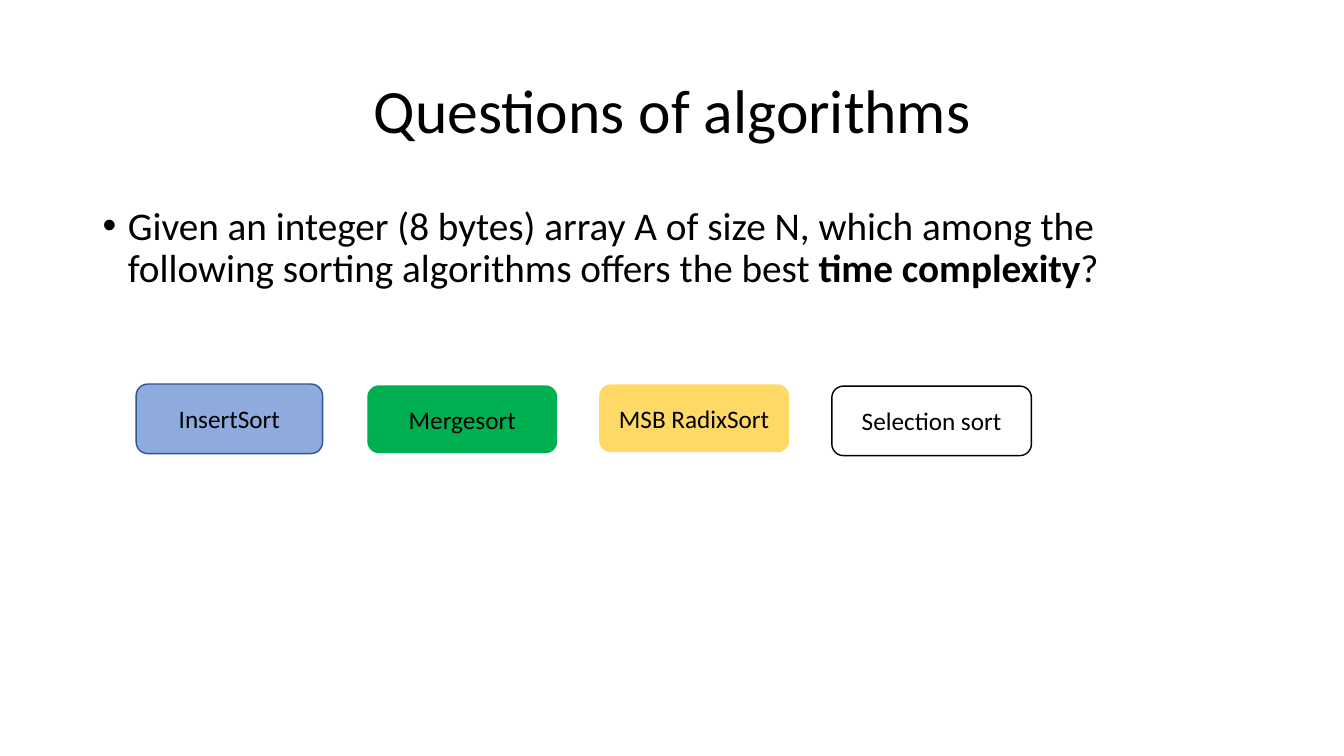
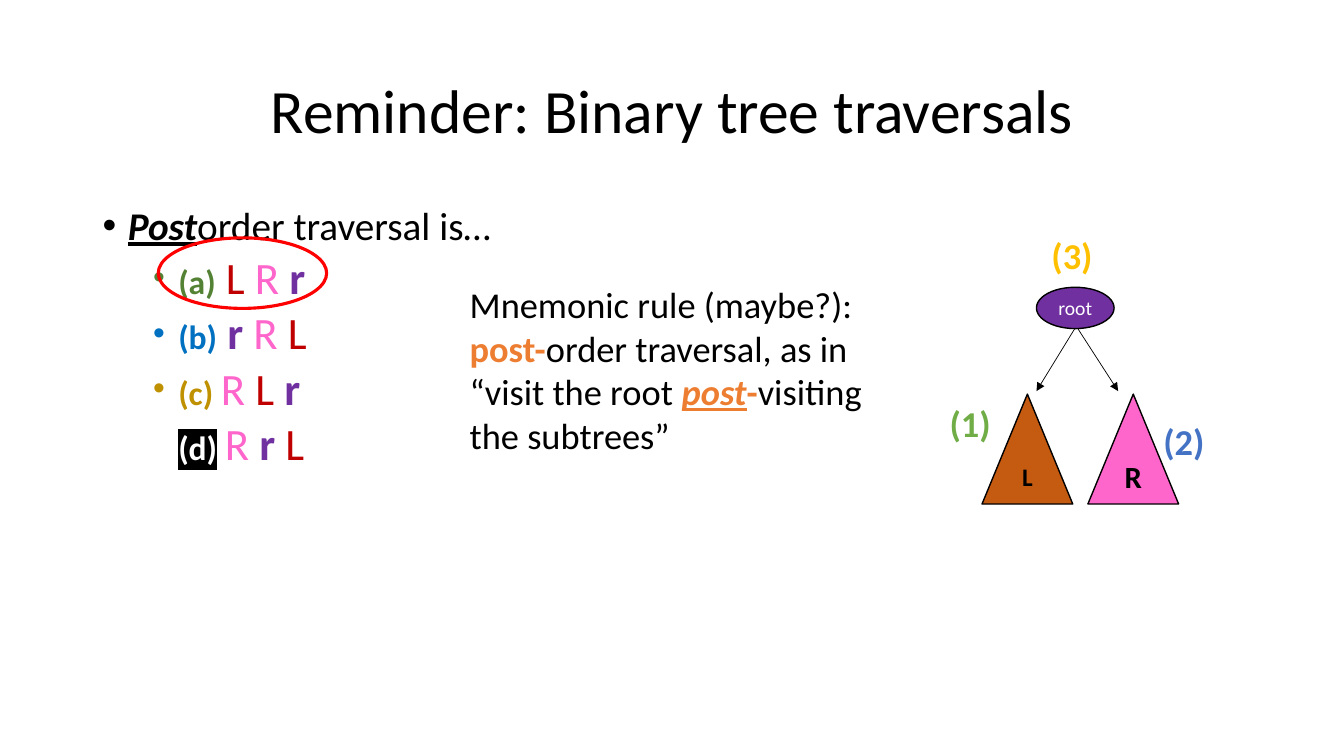
from lxml.etree import SubElement
from pptx import Presentation
from pptx.dml.color import RGBColor
from pptx.enum.shapes import MSO_CONNECTOR, MSO_SHAPE
from pptx.enum.text import MSO_ANCHOR, MSO_AUTO_SIZE, PP_ALIGN
from pptx.oxml.ns import qn
from pptx.util import Inches, Pt

FONT = "Calibri"
BLACK = RGBColor(0x00, 0x00, 0x00)
WHITE = RGBColor(0xFF, 0xFF, 0xFF)
RED = RGBColor(0xFF, 0x00, 0x00)
DARK_RED = RGBColor(0xC0, 0x00, 0x00)
PINK = RGBColor(0xFF, 0x66, 0xCC)
PURPLE = RGBColor(0x70, 0x30, 0xA0)
DARK_GREEN = RGBColor(0x54, 0x82, 0x35)
GREEN = RGBColor(0x00, 0xB0, 0x50)
LIGHT_GREEN = RGBColor(0x70, 0xAD, 0x47)
BRIGHT_BLUE = RGBColor(0x00, 0x70, 0xC0)
BLUE = RGBColor(0x44, 0x72, 0xC4)
PALE_BLUE = RGBColor(0x8F, 0xAA, 0xDC)
DARK_BLUE = RGBColor(0x2F, 0x55, 0x97)
OCHRE = RGBColor(0xBF, 0x90, 0x00)
GOLD = RGBColor(0xFF, 0xC0, 0x00)
YELLOW = RGBColor(0xFF, 0xD9, 0x66)
ORANGE = RGBColor(0xED, 0x7D, 0x31)
BROWN = RGBColor(0xC5, 0x5A, 0x11)


def add_text(paragraph, text, size=18, color=BLACK, bold=False, italic=False,
             underline=False, highlight=None):
    run = paragraph.add_run()
    run.text = text
    font = run.font
    font.size = Pt(size)
    font.bold = bold
    font.italic = italic
    font.underline = underline
    font.color.rgb = color
    if highlight is not None:
        mark = SubElement(font._element, qn("a:highlight"))
        SubElement(mark, qn("a:srgbClr"), val=str(highlight))
    font.name = FONT


class Deck:
    def __init__(self):
        self.presentation = Presentation()
        self.presentation.slide_width = Inches(13.33)
        self.presentation.slide_height = Inches(7.5)
        self.slide = None

    def add_slide(self, title):
        self.slide = self.presentation.slides.add_slide(self.presentation.slide_layouts[5])
        shape = self.slide.shapes.title
        shape.left, shape.top = Inches(0.92), Inches(0.4)
        shape.width, shape.height = Inches(11.5), Inches(1.45)
        shape.text_frame.vertical_anchor = MSO_ANCHOR.MIDDLE
        paragraph = shape.text_frame.paragraphs[0]
        paragraph.alignment = PP_ALIGN.CENTER
        paragraph.line_spacing = 0.9
        add_text(paragraph, title, size=44)

    def add_box(self, left, top, width, height, wrap=True):
        box = self.slide.shapes.add_textbox(
            Inches(left), Inches(top), Inches(width), Inches(height))
        box.text_frame.word_wrap = wrap
        return box.text_frame

    def add_label(self, left, top, width, height, runs, wrap=True):
        frame = self.add_box(left, top, width, height, wrap)
        frame.auto_size = MSO_AUTO_SIZE.SHAPE_TO_FIT_TEXT
        for text, style in runs:
            add_text(frame.paragraphs[0], text, size=26, **style)

    def add_bullets(self, items):
        frame = self.add_box(0.92, 2, 11.5, 4.76)
        for index, (level, runs) in enumerate(items):
            paragraph = frame.add_paragraph() if index else frame.paragraphs[0]
            paragraph.level = level
            paragraph.line_spacing = 0.9
            paragraph.space_before = Pt(5 if level else 10)
            properties = paragraph._p.get_or_add_pPr()
            properties.set("marL", str(Inches(0.25 + 0.5 * level)))
            properties.set("indent", str(Inches(-0.25)))
            SubElement(properties, qn("a:buFont"), typeface="Arial")
            SubElement(properties, qn("a:buChar"), char="•")
            for text, style in runs:
                add_text(paragraph, text, **style)

    def add_shape(self, kind, left, top, width, height, fill=None, line=BLACK,
                  line_width=1, text="", **style):
        shape = self.slide.shapes.add_shape(
            kind, Inches(left), Inches(top), Inches(width), Inches(height))
        shape.shadow.inherit = False
        if fill is None:
            shape.fill.background()
        else:
            shape.fill.solid()
            shape.fill.fore_color.rgb = fill
        shape.line.color.rgb = line
        shape.line.width = Pt(line_width)
        if text:
            frame = shape.text_frame
            frame.word_wrap = False
            frame.vertical_anchor = MSO_ANCHOR.MIDDLE
            frame.paragraphs[0].alignment = PP_ALIGN.CENTER
            add_text(frame.paragraphs[0], text, **style)

    def add_arrow(self, start_x, start_y, end_x, end_y):
        arrow = self.slide.shapes.add_connector(
            MSO_CONNECTOR.STRAIGHT, Inches(start_x), Inches(start_y),
            Inches(end_x), Inches(end_y))
        arrow.line.color.rgb = BLACK
        arrow.line.width = Pt(0.5)
        SubElement(arrow.line._get_or_add_ln(), qn("a:tailEnd"), type="triangle")
        SubElement(arrow._element.spPr, qn("a:effectLst"))


def build_question(deck):
    deck.add_slide("Questions of algorithms")
    size = {"size": 28}
    deck.add_bullets([(0, [
        ("Given an integer (8 bytes) array A of size N, which among the "
         "following sorting algorithms offers the best ", size),
        ("time complexity", {"size": 28, "bold": True}),
        ("?", size),
    ])])
    answers = [
        ("InsertSort", 3.81, 1.85, 0.69, PALE_BLUE, DARK_BLUE),
        ("Mergesort", 3.83, 1.87, 0.66, GREEN, GREEN),
        ("MSB RadixSort", 3.82, 1.87, 0.66, YELLOW, YELLOW),
        ("Selection sort", 3.83, 1.98, 0.69, WHITE, BLACK),
    ]
    for index, (text, top, width, height, fill, line) in enumerate(answers):
        deck.add_shape(MSO_SHAPE.ROUNDED_RECTANGLE, 1.35 + 2.3 * index, top,
                       width, height, fill, line, text=text)


def build_traversal(deck):
    deck.add_slide("Reminder: Binary tree traversals")
    node_styles = {
        "L": {"size": 32, "color": DARK_RED},
        "R": {"size": 32, "color": PINK},
        "r": {"size": 32, "color": PURPLE, "bold": True},
    }
    options = [
        ("(a)", {"color": DARK_GREEN}, " ", 32, "LRr"),
        ("(b)", {"color": BRIGHT_BLUE}, " ", 32, "rRL"),
        ("(c)", {"color": OCHRE}, " ", 24, "RLr"),
        ("(d)", {"color": WHITE, "highlight": BLACK}, " ", 24, "RrL"),
    ]
    items = [(0, [
        ("Post", {"size": 28, "bold": True, "italic": True, "underline": True}),
        ("order traversal is…", {"size": 28}),
    ])]
    for letter, style, gap, gap_size, nodes in options:
        runs = [(letter, {"size": 24, "bold": True, **style}), (gap, {"size": gap_size})]
        runs += [(node + " ", node_styles[node]) for node in nodes[:-1]]
        runs.append((nodes[-1], node_styles[nodes[-1]]))
        items.append((1, runs))
    deck.add_bullets(items)

    deck.add_shape(MSO_SHAPE.OVAL, 10.28, 2.85, 0.77, 0.41, PURPLE,
                   text="root", size=14, color=WHITE)
    for start_x, end_x in [(10.66, 10.28), (10.69, 11.09)]:
        deck.add_arrow(start_x, 3.26, end_x, 3.88)
    for text, left, fill, size in [("L", 9.74, BROWN, 18), ("R", 10.79, PINK, 22)]:
        deck.add_shape(MSO_SHAPE.ISOSCELES_TRIANGLE, left, 3.91, 0.9, 1.09, fill,
                       text=text, size=size, bold=True)
    deck.add_shape(MSO_SHAPE.OVAL, 1.57, 2.36, 1.67, 0.7, line=RED, line_width=2.25)

    visits = [
        ("(1)", 9.32, 3.93, 0.7, LIGHT_GREEN, True),
        ("(2)", 11.44, 4.11, 0.61, BLUE, False),
        ("(3)", 10.33, 2.26, 0.61, GOLD, False),
    ]
    for text, left, top, width, color, wrap in visits:
        deck.add_label(left, top, width, 0.54,
                       [(text, {"color": color, "bold": True})], wrap)
    accent = {"color": ORANGE, "bold": True}
    deck.add_label(4.56, 2.75, 4.43, 1.85, [
        ("Mnemonic rule (maybe?): ", {}),
        ("post-", accent),
        ("order traversal, as in “visit the root ", {}),
        ("post", {**accent, "italic": True, "underline": True}),
        ("-", accent),
        ("visiting the subtrees”", {}),
    ])


def main():
    deck = Deck()
    build_question(deck)
    build_traversal(deck)
    deck.presentation.save("out.pptx")


if __name__ == "__main__":
    main()
